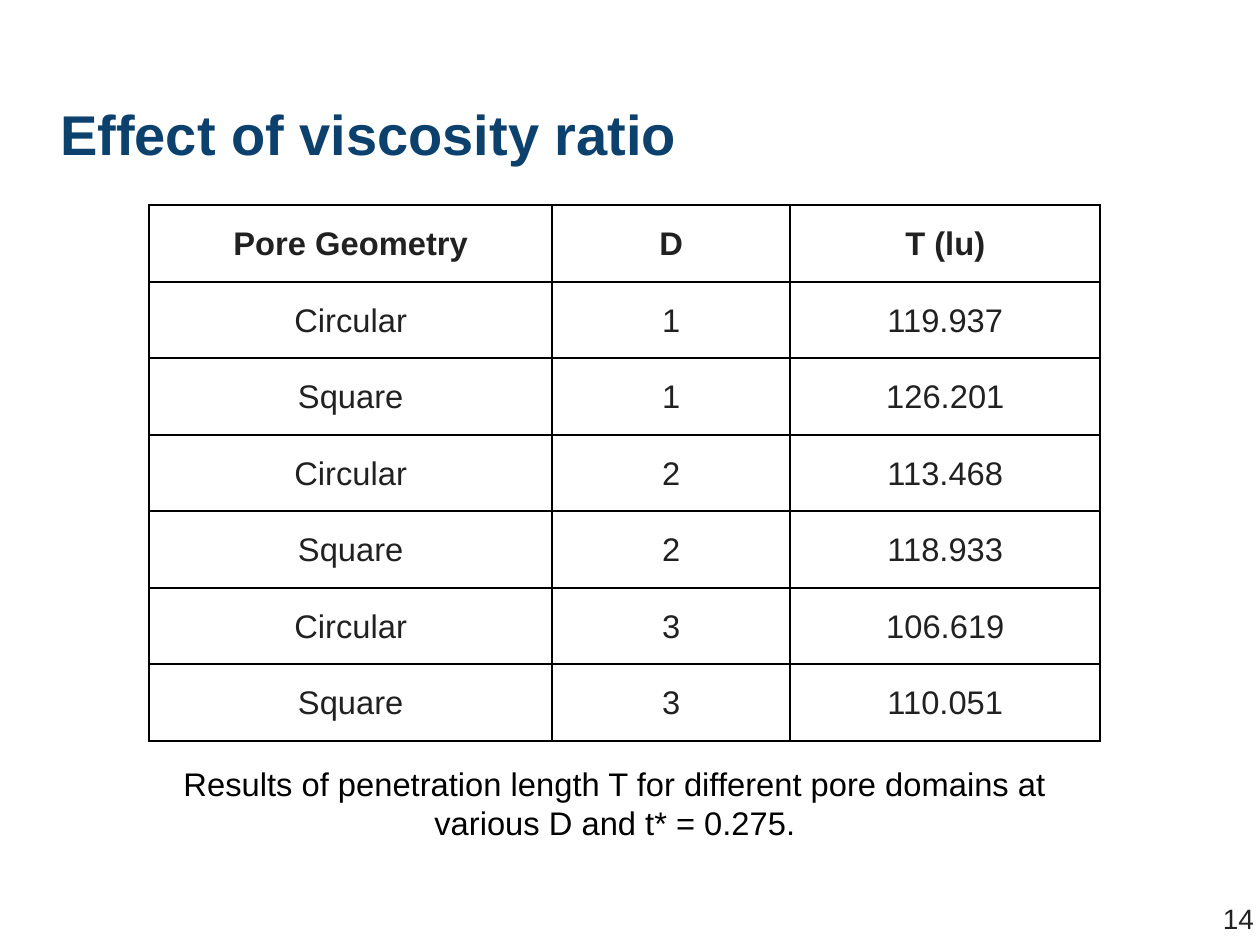
from pptx import Presentation
from pptx.dml.color import RGBColor
from pptx.enum.shapes import MSO_SHAPE as Shape
from pptx.enum.text import MSO_ANCHOR as Anchor, PP_ALIGN as Align
from pptx.oxml import parse_xml
from pptx.oxml.ns import nsdecls
from pptx.util import Cm, Pt

WIDTH, HEIGHT = 19.05, 14.29
FONT = "Arial"
DARK, BLACK, WHITE, NAVY = "212121", "000000", "FFFFFF", "0C406D"

HEADINGS = ("Pore Geometry", "D", "T (lu)")
RESULTS = [
    ("Circular", "1", "119.937"),
    ("Square", "1", "126.201"),
    ("Circular", "2", "113.468"),
    ("Square", "2", "118.933"),
    ("Circular", "3", "106.619"),
    ("Square", "3", "110.051"),
]
COLUMN_SHARES = (2.4, 1.42, 1.85)


def color(value):
    return RGBColor.from_string(value)


def add_span(para, text, size, ink, bold=False):
    span = para.add_run()
    span.text = text
    span.font.name = FONT
    span.font.size = Pt(size)
    span.font.bold = bold
    span.font.color.rgb = color(ink)


def add_text(page, box, text, size, ink, bold=False, align=Align.LEFT,
             anchor=Anchor.TOP, spacing=1.0, wrap=True):
    frame = page.shapes.add_textbox(*map(Cm, box)).text_frame
    frame.word_wrap = wrap
    frame.vertical_anchor = anchor
    para = frame.paragraphs[0]
    para.alignment = align
    para.line_spacing = spacing
    add_span(para, text, size, ink, bold)


def add_backdrop(page, box):
    page.background.fill.solid()
    page.background.fill.fore_color.rgb = color(DARK)
    panel = page.shapes.add_shape(Shape.RECTANGLE, *map(Cm, box))
    panel.shadow.inherit = False
    panel.fill.solid()
    panel.fill.fore_color.rgb = color(WHITE)
    panel.line.color.rgb = color(WHITE)
    panel.line.width = Pt(2)


def add_borders(cell):
    props = cell._tc.get_or_add_tcPr()
    for index, side in enumerate(("lnL", "lnR", "lnT", "lnB")):
        props.insert(index, parse_xml(
            f'<a:{side} {nsdecls("a")} w="{Pt(1)}"><a:solidFill>'
            f'<a:srgbClr val="{BLACK}"/></a:solidFill></a:{side}>'))


def fill_cell(cell, text, bold):
    cell.fill.background()
    cell.vertical_anchor = Anchor.MIDDLE
    cell.margin_left = cell.margin_right = Cm(0.03)
    cell.margin_top = cell.margin_bottom = Cm(0.03)
    para = cell.text_frame.paragraphs[0]
    para.alignment = Align.CENTER
    para.line_spacing = 1.07
    add_span(para, text, 14, DARK, bold)
    add_borders(cell)


def add_results_table(page, box):
    rows = [HEADINGS, *RESULTS]
    width, height = box[2:]
    table = page.shapes.add_table(
        len(rows), len(HEADINGS), *map(Cm, box)).table
    table.first_row = table.horz_banding = False
    for column, share in zip(table.columns, COLUMN_SHARES):
        column.width = Cm(width * share / sum(COLUMN_SHARES))
    for number, (row, texts) in enumerate(zip(table.rows, rows)):
        row.height = Cm(height / len(rows))
        for cell, text in zip(row.cells, texts):
            fill_cell(cell, text, bold=number == 0)


def build_results_page(page, box):
    left, top, width, height = box
    add_backdrop(page, box)

    # Results and their caption
    add_results_table(page, (left + 2.26, top + 3.1, 14.38, 8.1))
    add_text(page, (left + 2.11, top + 11.43, 14.38, 1.45),
             "Results of penetration length T for different pore domains "
             "at various D and t* = 0.275.", 14, BLACK, align=Align.CENTER)

    # Page number
    add_text(page, (left + width - 0.81, top + height - 0.78, 0.99, 0.77),
             "14", 12, DARK, wrap=False)

    # Title
    add_text(page, (left + 0.66, top + 1.17, 17.78, 1.8),
             "Effect of viscosity ratio", 24, NAVY, bold=True,
             anchor=Anchor.MIDDLE, spacing=0.9)


def main():
    deck = Presentation()
    deck.slide_width, deck.slide_height = Cm(WIDTH), Cm(HEIGHT)
    page = deck.slides.add_slide(deck.slide_layouts[6])
    build_results_page(page, (0, 0, WIDTH, HEIGHT))
    deck.save("out.pptx")


if __name__ == "__main__":
    main()
